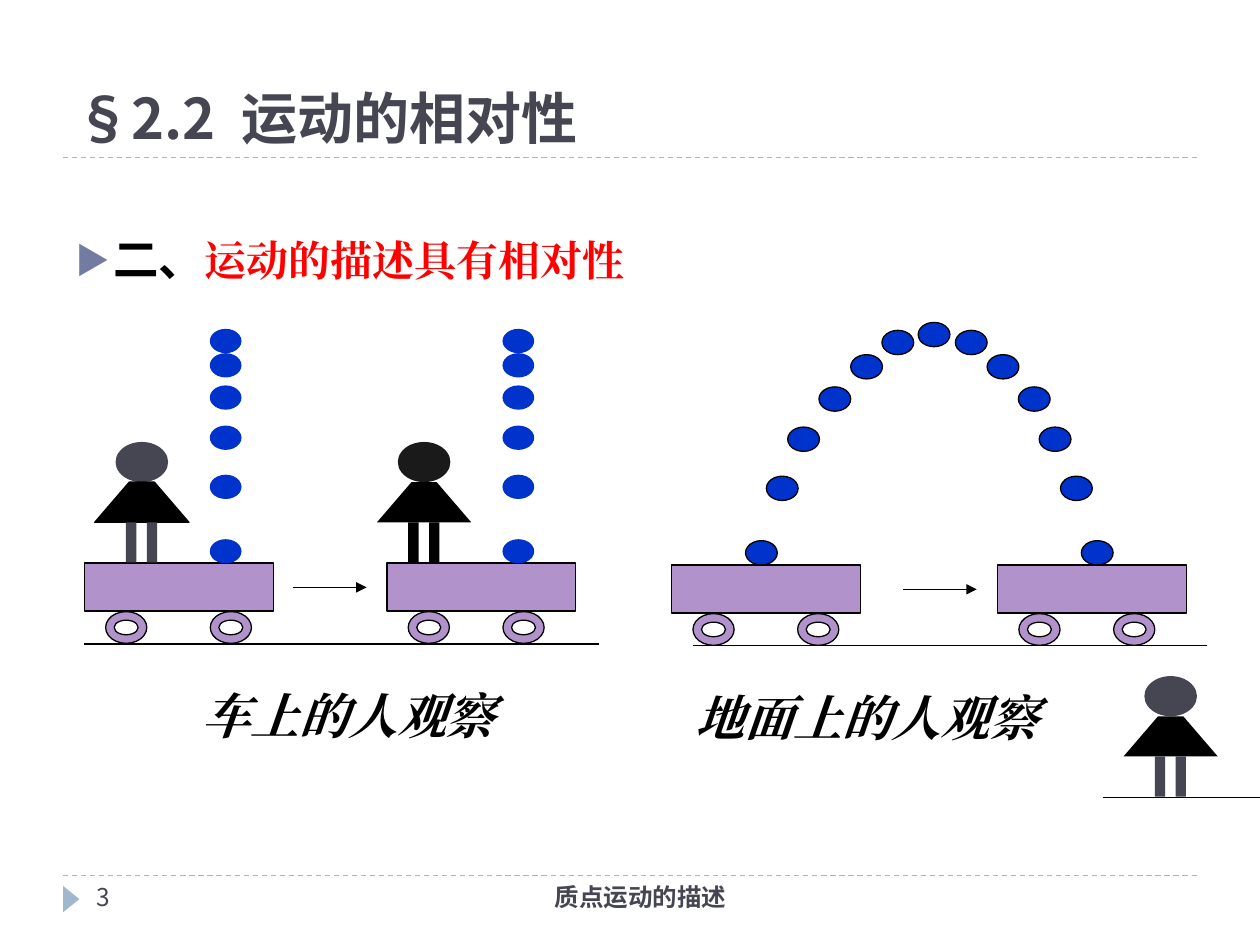
"""Build a physics slide on the relativity of motion: a ball thrown from a moving cart."""
from lxml import etree
from pptx import Presentation
from pptx.dml.color import RGBColor
from pptx.enum.dml import MSO_LINE
from pptx.enum.shapes import MSO_CONNECTOR, MSO_SHAPE
from pptx.enum.text import MSO_ANCHOR, PP_ALIGN
from pptx.oxml.ns import qn
from pptx.util import Cm, Pt

RECT, OVAL, RING = MSO_SHAPE.RECTANGLE, MSO_SHAPE.OVAL, MSO_SHAPE.DONUT
SKIRT, TRIANGLE = MSO_SHAPE.TRAPEZOID, MSO_SHAPE.ISOSCELES_TRIANGLE
STRAIGHT, DASH = MSO_CONNECTOR.STRAIGHT, MSO_LINE.DASH
TOP, BOTTOM = MSO_ANCHOR.TOP, MSO_ANCHOR.BOTTOM
LEFT, CENTER = PP_ALIGN.LEFT, PP_ALIGN.CENTER
SANS, SERIF = "Noto Sans CJK JP", "Times New Roman"
BLACK, SLATE, LILAC, BLUE, MIST = "000000", "464653", "B292CA", "0033CC", "9FB8CD"

deck = Presentation()
deck.slide_width, deck.slide_height = Cm(25.4), Cm(19.05)
slide = deck.slides.add_slide(deck.slide_layouts[6])


def draw(kind, x, y, w, h, fill, outline=None):
    part = slide.shapes.add_shape(kind, Cm(x), Cm(y), Cm(w), Cm(h))
    part.shadow.inherit = False
    part.fill.solid()
    part.fill.fore_color.rgb = RGBColor.from_string(fill)
    if outline:
        part.line.color.rgb = RGBColor.from_string(outline)
        part.line.width = Pt(0.75)
    else:
        part.line.fill.background()
    return part


def write(x, y, w, h, runs, anchor=TOP, align=LEFT):
    frame = slide.shapes.add_textbox(Cm(x), Cm(y), Cm(w), Cm(h)).text_frame
    frame.word_wrap = True
    frame.vertical_anchor = anchor
    paragraph = frame.paragraphs[0]
    paragraph.alignment = align
    for words, color, style in runs:
        run = paragraph.add_run()
        run.text = words
        for name, value in style.items():
            setattr(run.font, name, value)
        run.font.color.rgb = RGBColor.from_string(color)
        etree.SubElement(run._r.rPr, qn("a:ea"), typeface=style["name"])
    return paragraph


# x1, y1, x2, y2, color, dashed, arrow
for x1, y1, x2, y2, color, dashed, arrow in [
    (1.27, 17.65, 24.13, 17.65, MIST, True, False),
    (1.27, 3.17, 24.13, 3.17, MIST, True, False),
    (1.7, 12.98, 12.07, 12.98, BLACK, False, False),
    (13.97, 13.01, 24.34, 13.01, BLACK, False, False),
    (22.23, 16.07, 25.4, 16.07, BLACK, False, False),
    (5.9, 11.84, 7.39, 11.84, BLACK, False, True),
    (18.2, 11.88, 19.69, 11.88, BLACK, False, True),
]:
    stroke = slide.shapes.add_connector(STRAIGHT, Cm(x1), Cm(y1), Cm(x2), Cm(y2))
    stroke.line.color.rgb = RGBColor.from_string(color)
    stroke.line.width = Pt(0.75)
    if dashed:
        stroke.line.dash_style = DASH
    if arrow:
        etree.SubElement(stroke.line._get_or_add_ln(), qn("a:tailEnd"), type="triangle")
    etree.SubElement(stroke._element.spPr, qn("a:effectLst"))

page_marker = draw(TRIANGLE, 1.17, 17.96, 0.53, 0.33, MIST)
page_marker.rotation = 90

for cart_x, cart_y, wheel_offsets in [
    (1.7, 11.35, (0.43, 2.54)),
    (7.8, 11.35, (0.43, 2.34)),
    (13.54, 11.39, (0.43, 2.54)),
    (20.11, 11.39, (0.43, 2.34)),
]:
    draw(RECT, cart_x, cart_y, 3.81, 0.97, LILAC, BLACK)
    for offset in wheel_offsets:
        wheel = draw(RING, cart_x + offset, cart_y + 0.98, 0.83, 0.64, LILAC, BLACK)
        wheel.adjustments[0] = 0.27

heights = [6.63, 7.12, 7.77, 8.58, 9.57, 10.87]
rising = [17.78, 17.15, 16.51, 15.88, 15.45, 15.03]
falling = [19.26, 19.9, 20.53, 20.95, 21.38, 21.8]
for ball_y, rise_x, fall_x in zip(heights, rising, falling):
    for ball_x in (4.23, 10.13):
        draw(OVAL, ball_x, ball_y, 0.64, 0.49, BLUE)
    for ball_x in (rise_x, fall_x):
        draw(OVAL, ball_x, ball_y + 0.03, 0.64, 0.49, BLUE, BLACK)
draw(OVAL, 18.51, 6.5, 0.64, 0.49, BLUE, BLACK)

for head_x, head_y, head_color, leg_color, skirt_outline in [
    (2.33, 8.91, SLATE, SLATE, BLACK),
    (8.02, 8.91, "1A1A1A", BLACK, None),
    (23.07, 13.63, SLATE, SLATE, None),
]:
    draw(OVAL, head_x, head_y, 1.06, 0.81, head_color)
    skirt = draw(SKIRT, head_x - 0.42, head_y + 0.81, 1.9, 0.81, BLACK, skirt_outline)
    skirt.adjustments[0] = 0.86
    for offset in (0.21, 0.63):
        draw(RECT, head_x + offset, head_y + 1.62, 0.21, 0.81, leg_color)

heading = {"name": SANS, "size": Pt(32), "bold": True}
numeral = {"name": SANS, "size": Pt(26), "bold": True}
topic = {"name": SERIF, "size": Pt(24), "bold": True}
caption = {"name": SERIF, "size": Pt(28), "bold": True, "italic": True}
small = {"name": SANS, "size": Pt(14)}

write(1.27, 0.43, 22.86, 2.74, [("§2.2  运动的相对性", SLATE, heading)], BOTTOM)
point = write(1.27, 3.99, 22.86, 3.15,
              [("二、", BLACK, numeral), ("运动的描述具有相对性", "FF0000", topic)])
point.line_spacing = 1.5
point.space_before = Pt(6)
layout = point._p.get_or_add_pPr()
layout.set("marL", str(Cm(0.76)))
layout.set("indent", str(Cm(-0.76)))
bullet_color = etree.SubElement(layout, qn("a:buClr"))
etree.SubElement(bullet_color, qn("a:srgbClr"), val="727CA3")
etree.SubElement(layout, qn("a:buSzPct"), val="76000")
etree.SubElement(layout, qn("a:buFont"), typeface=SANS)
etree.SubElement(layout, qn("a:buChar"), char="▶")

write(3.81, 13.69, 6.99, 1.45, [("车上的人观察", BLACK, caption)])
write(13.77, 13.74, 8.46, 1.45, [("地面上的人观察", BLACK, caption)])
write(1.7, 17.65, 5.51, 1.02, [("3", SLATE, small)])
write(8.05, 17.65, 9.73, 1.02, [("质点运动的描述", SLATE, {**small, "bold": True})], align=CENTER)

deck.save("out.pptx")
